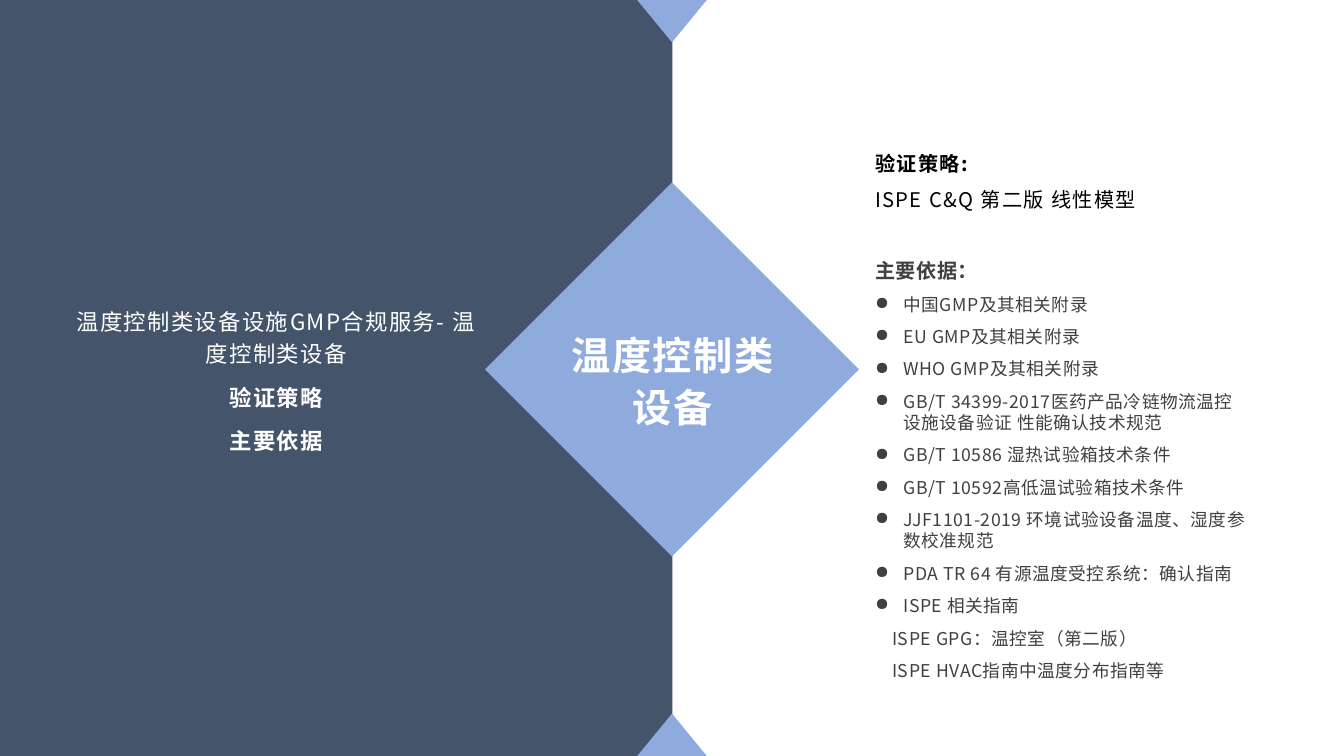
from lxml import etree
from pptx import Presentation
from pptx.dml.color import RGBColor
from pptx.enum.shapes import MSO_SHAPE
from pptx.enum.text import MSO_ANCHOR, MSO_AUTO_SIZE, PP_ALIGN
from pptx.oxml.ns import qn
from pptx.util import Inches, Pt

CENTER, LEFT = PP_ALIGN.CENTER, PP_ALIGN.LEFT
FONT = "Noto Sans CJK SC"
COLORS = {"navy": "44546A", "blue": "8FAADC", "white": "FFFFFF",
          "black": "000000", "gray": "404040"}


def set_frame(box, left, top, width, height):
    box.left, box.top = Inches(left), Inches(top)
    box.width, box.height = Inches(width), Inches(height)
    frame = box.text_frame
    frame.word_wrap = True
    frame.auto_size = MSO_AUTO_SIZE.NONE
    frame.vertical_anchor = MSO_ANCHOR.MIDDLE
    frame.margin_left = frame.margin_right = Inches(0.07)
    frame.margin_top = frame.margin_bottom = Inches(0.03)
    return frame


def add_line(frame, text, size, color, bold=False, tracking=1, align=LEFT,
             spacing=1.0, after=8, before=0, indent=0, bullet=False):
    para = frame.paragraphs[0]
    if para.runs:
        para = frame.add_paragraph()
    para.alignment, para.line_spacing = align, spacing
    para.space_before, para.space_after = Pt(before), Pt(after)
    props = para._p.get_or_add_pPr()
    props.set("marL", str(Inches(indent)))
    props.set("indent", str(-Inches(indent) if bullet else 0))
    if bullet:
        etree.SubElement(props, qn("a:buChar")).set("char", "●")
    span = para.add_run()
    span.text = text
    span.font.size, span.font.bold, span.font.name = Pt(size), bold, FONT
    span.font.color.rgb = RGBColor.from_string(COLORS[color])
    run_props = span.font._element
    run_props.set("spc", str(round(tracking * 100)))
    etree.SubElement(run_props, qn("a:ea")).set("typeface", FONT)


deck = Presentation()
deck.slide_width, deck.slide_height = Inches(13.33), Inches(7.5)
page = deck.slides.add_slide(deck.slide_layouts[5])

# Left panel, edge triangles and central diamond
for kind, left, top, width, height, color, turn in [
    (MSO_SHAPE.RECTANGLE, 0, 0, 6.67, 7.5, "navy", 0),
    (MSO_SHAPE.ISOSCELES_TRIANGLE, 6.32, 0, 0.69, 0.42, "blue", 180),
    (MSO_SHAPE.ISOSCELES_TRIANGLE, 6.32, 7.08, 0.69, 0.42, "blue", 0),
    (MSO_SHAPE.DIAMOND, 4.81, 1.81, 3.71, 3.71, "blue", 0),
]:
    shape = page.shapes.add_shape(kind, Inches(left), Inches(top),
                                  Inches(width), Inches(height))
    shape.shadow.inherit = False
    shape.fill.solid()
    shape.fill.fore_color.rgb = RGBColor.from_string(COLORS[color])
    shape.line.fill.background()
    shape.rotation = turn

# Title, brought in front of the diamond
title = page.shapes.title
title.element.getparent().append(title.element)
title_frame = set_frame(title, 5.38, 2.67, 2.58, 2.17)
for text in ["温度控制类", "设备"]:
    add_line(title_frame, text, 28, "white", bold=True, tracking=1.2,
             align=CENTER, spacing=1.1, after=0)

# Summary on the left panel
summary = set_frame(page.shapes.add_textbox(0, 0, 0, 0), 0.67, 1.17, 4.14, 5.17)
for text, bold in [("温度控制类设备设施GMP合规服务- 温度控制类设备", False),
                   ("验证策略", True), ("主要依据", True)]:
    add_line(summary, text, 16, "white", bold=bold, align=CENTER, spacing=1.2)

# Strategy and references on the right
details = set_frame(page.shapes.add_textbox(0, 0, 0, 0), 8.61, 1.17, 3.83, 5.92)
add_line(details, "验证策略:", 14.4, "black", bold=True)
add_line(details, "ISPE C&Q 第二版 线性模型", 14.4, "black")
add_line(details, "主要依据：", 14.4, "gray", bold=True, tracking=0.4, before=25.4)
for text in [
    "中国GMP及其相关附录",
    "EU GMP及其相关附录",
    "WHO GMP及其相关附录",
    "GB/T 34399-2017医药产品冷链物流温控设施设备验证 性能确认技术规范",
    "GB/T 10586 湿热试验箱技术条件",
    "GB/T 10592高低温试验箱技术条件",
    "JJF1101-2019 环境试验设备温度、湿度参数校准规范",
    "PDA TR 64 有源温度受控系统：确认指南",
    "ISPE 相关指南",
]:
    add_line(details, text, 12.6, "gray", tracking=0.4, indent=0.28, bullet=True)
for text in ["ISPE GPG：温控室（第二版）", "ISPE HVAC指南中温度分布指南等"]:
    add_line(details, text, 12.6, "gray", tracking=0.4, indent=0.17)

deck.save("out.pptx")
